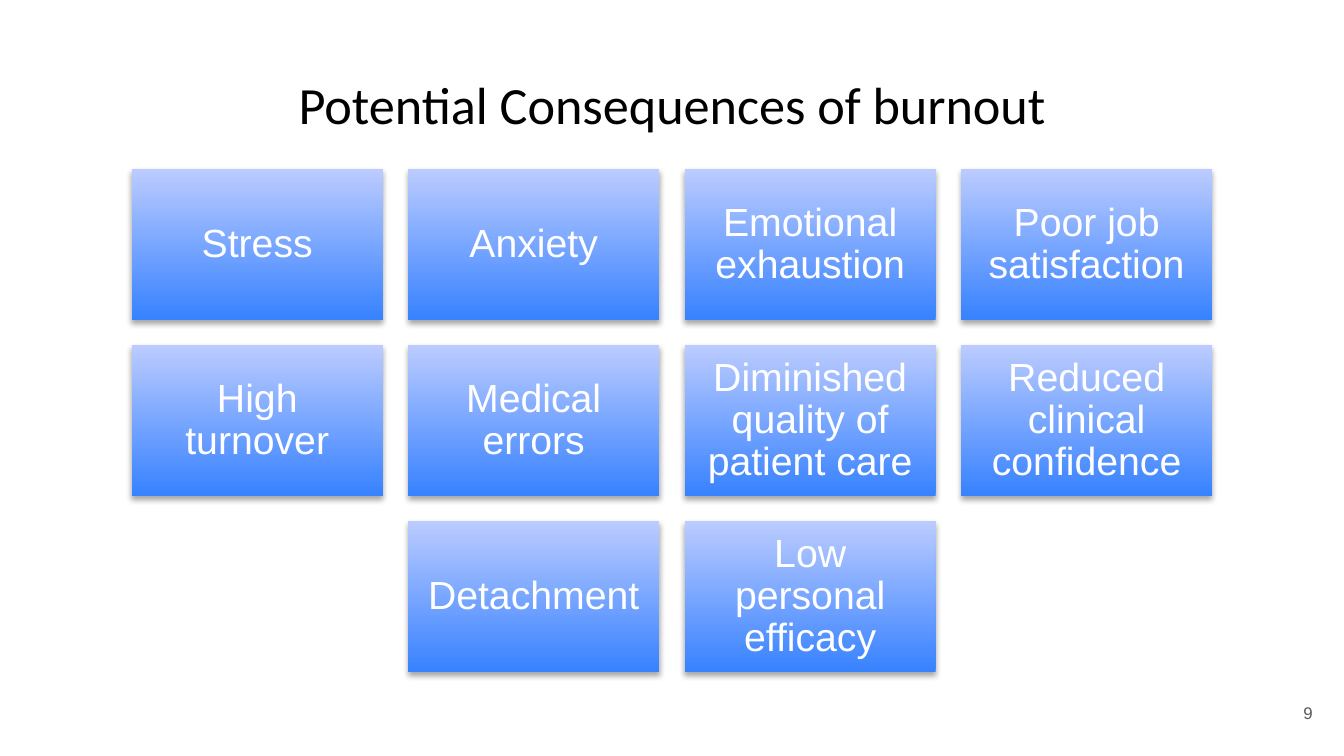
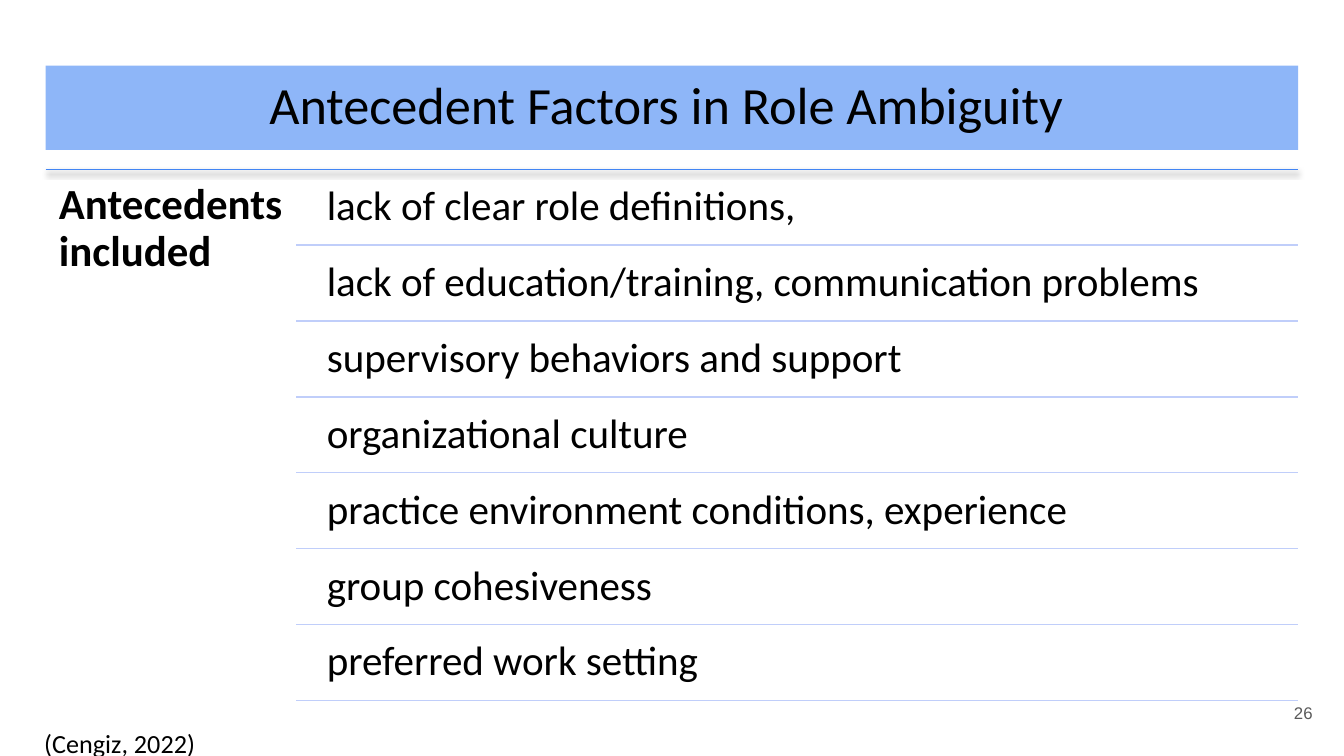
import pptx
import pptx.util
import pptx.dml.color
import pptx.enum.shapes
import pptx.enum.text
import pptx.oxml.ns
from lxml import etree

Pt = pptx.util.Pt
RGBColor = pptx.dml.color.RGBColor
ALIGN = pptx.enum.text.PP_ALIGN
ANCHOR = pptx.enum.text.MSO_ANCHOR
qn = pptx.oxml.ns.qn

CONSEQUENCES = {
    "title": "Potential Consequences of burnout",
    "number": "9",
    "rows": [
        ["Stress", "Anxiety", "Emotional exhaustion", "Poor job satisfaction"],
        ["High turnover", "Medical errors", "Diminished quality of patient care",
         "Reduced clinical confidence"],
        ["Detachment", "Low personal efficacy"],
    ],
}
ANTECEDENTS = {
    "title": "Antecedent Factors in Role Ambiguity ",
    "number": "26",
    "heading": "Antecedents included",
    "factors": [
        "lack of clear role definitions,",
        "lack of education/training, communication problems",
        "supervisory behaviors and support",
        "organizational culture",
        "practice environment conditions, experience",
        "group cohesiveness",
        "preferred work setting",
    ],
    "citation": "(Cengiz, 2022)",
}

BLACK = RGBColor(0x00, 0x00, 0x00)
WHITE = RGBColor(0xFF, 0xFF, 0xFF)
GREY = RGBColor(0x59, 0x59, 0x59)
TITLE_BAND = RGBColor(0x8E, 0xB6, 0xF8)
CARD_DARK = RGBColor(0x37, 0x82, 0xFF)
CARD_LIGHT = RGBColor(0xBB, 0xCB, 0xFF)
HEADER_RULE = RGBColor(0x42, 0x85, 0xF4)
FACTOR_RULE = RGBColor(0xC0, 0xCE, 0xFA)

TITLE = {"name": "Calibri", "size": Pt(28)}
NUMBER = {"name": "Arial", "size": Pt(9)}
CARD = {"name": "Arial", "size": Pt(21)}
HEADING = {"name": "Calibri", "size": Pt(23), "bold": True}
FACTOR = {"name": "Calibri", "size": Pt(22)}
CITATION = {"name": "Calibri", "size": Pt(14)}

SLIDE_W, SLIDE_H = 720, 405
LEFT, RIGHT = 24.5, 695.5
BODY_TOP = 90.7
CARD_W, CARD_H, CARD_GAP = 134.6, 80.8, 13.5
FACTOR_LEFT, RULE_LEFT = 168.5, 158.7
FACTOR_H, FACTOR_GAP = 38.7, 1.94


def write(sp, text, fmt, color=BLACK, align=ALIGN.LEFT, anchor=ANCHOR.TOP,
          inset=7.2, spacing=0.9):
    tf = sp.text_frame
    tf.word_wrap = True
    tf.vertical_anchor = anchor
    for side in ("left", "top", "right", "bottom"):
        setattr(tf, f"margin_{side}", Pt(inset))
    p = tf.paragraphs[0]
    p.alignment = align
    p.line_spacing = spacing
    r = p.add_run()
    r.text = text
    for key, value in fmt.items():
        setattr(r.font, key, value)
    r.font.color.rgb = color


def add_text(s, box, text, fmt, **layout):
    sp = s.shapes.add_textbox(*map(Pt, box))
    write(sp, text, fmt, **layout)
    return sp


def add_shadow(sp, opacity=35, distance=1.8):
    effects = etree.SubElement(sp._element.spPr, qn("a:effectLst"))
    shadow = etree.SubElement(effects, qn("a:outerShdw"), blurRad=str(Pt(3.1)),
                              dist=str(Pt(distance)), dir="5400000", rotWithShape="0")
    color = etree.SubElement(shadow, qn("a:srgbClr"), val=str(BLACK))
    etree.SubElement(color, qn("a:alpha"), val=str(opacity * 1000))


def add_rule(s, left, y, color, **shadow):
    sp = s.shapes.add_connector(pptx.enum.shapes.MSO_CONNECTOR.STRAIGHT,
                                Pt(left), Pt(y), Pt(RIGHT), Pt(y))
    sp.line.color.rgb = color
    sp.line.width = Pt(0.75)
    add_shadow(sp, **shadow)


def add_card(s, left, top, text):
    sp = s.shapes.add_shape(pptx.enum.shapes.MSO_SHAPE.RECTANGLE,
                            Pt(left), Pt(top), Pt(CARD_W), Pt(CARD_H))
    sp.fill.gradient()
    sp.fill.gradient_angle = 90
    for stop, color in zip(sp.fill.gradient_stops, (CARD_DARK, CARD_LIGHT)):
        stop.color.rgb = color
    sp.line.fill.background()
    add_shadow(sp)
    write(sp, text, CARD, color=WHITE, align=ALIGN.CENTER,
          anchor=ANCHOR.MIDDLE, inset=6.3)


def add_slide(prs, content, band=None):
    s = prs.slides.add_slide(prs.slide_layouts[6])
    title = add_text(s, (LEFT, 35.2, RIGHT - LEFT, 45.1), content["title"], TITLE,
                     align=ALIGN.CENTER)
    if band is not None:
        title.fill.solid()
        title.fill.fore_color.rgb = band
    add_text(s, (667.1, 367.2, 43.2, 31), content["number"], NUMBER, color=GREY,
             align=ALIGN.RIGHT, anchor=ANCHOR.MIDDLE)
    return s


def build_consequences(prs):
    s = add_slide(prs, CONSEQUENCES)
    for i, row in enumerate(CONSEQUENCES["rows"]):
        row_w = len(row) * (CARD_W + CARD_GAP) - CARD_GAP
        top = BODY_TOP + i * (CARD_H + CARD_GAP)
        for j, text in enumerate(row):
            add_card(s, (SLIDE_W - row_w) / 2 + j * (CARD_W + CARD_GAP), top, text)


def build_antecedents(prs):
    s = add_slide(prs, ANTECEDENTS, TITLE_BAND)
    add_rule(s, LEFT, BODY_TOP, HEADER_RULE)
    add_text(s, (LEFT, BODY_TOP, RULE_LEFT - LEFT, 286.6), ANTECEDENTS["heading"], HEADING)
    for i, text in enumerate(ANTECEDENTS["factors"]):
        top = BODY_TOP + FACTOR_GAP + i * (FACTOR_H + FACTOR_GAP)
        add_text(s, (FACTOR_LEFT, top, RIGHT - FACTOR_LEFT, FACTOR_H), text, FACTOR,
                 inset=6.6)
        add_rule(s, RULE_LEFT, top + FACTOR_H, FACTOR_RULE, opacity=38, distance=1.6)
    citation = add_text(s, (16.6, 385.9, 188.6, 24.2), ANTECEDENTS["citation"], CITATION,
                        spacing=1.0)
    citation.text_frame.margin_top = citation.text_frame.margin_bottom = Pt(3.6)


def main():
    prs = pptx.Presentation()
    prs.slide_width, prs.slide_height = Pt(SLIDE_W), Pt(SLIDE_H)
    build_consequences(prs)
    build_antecedents(prs)
    prs.save("out.pptx")


if __name__ == "__main__":
    main()
